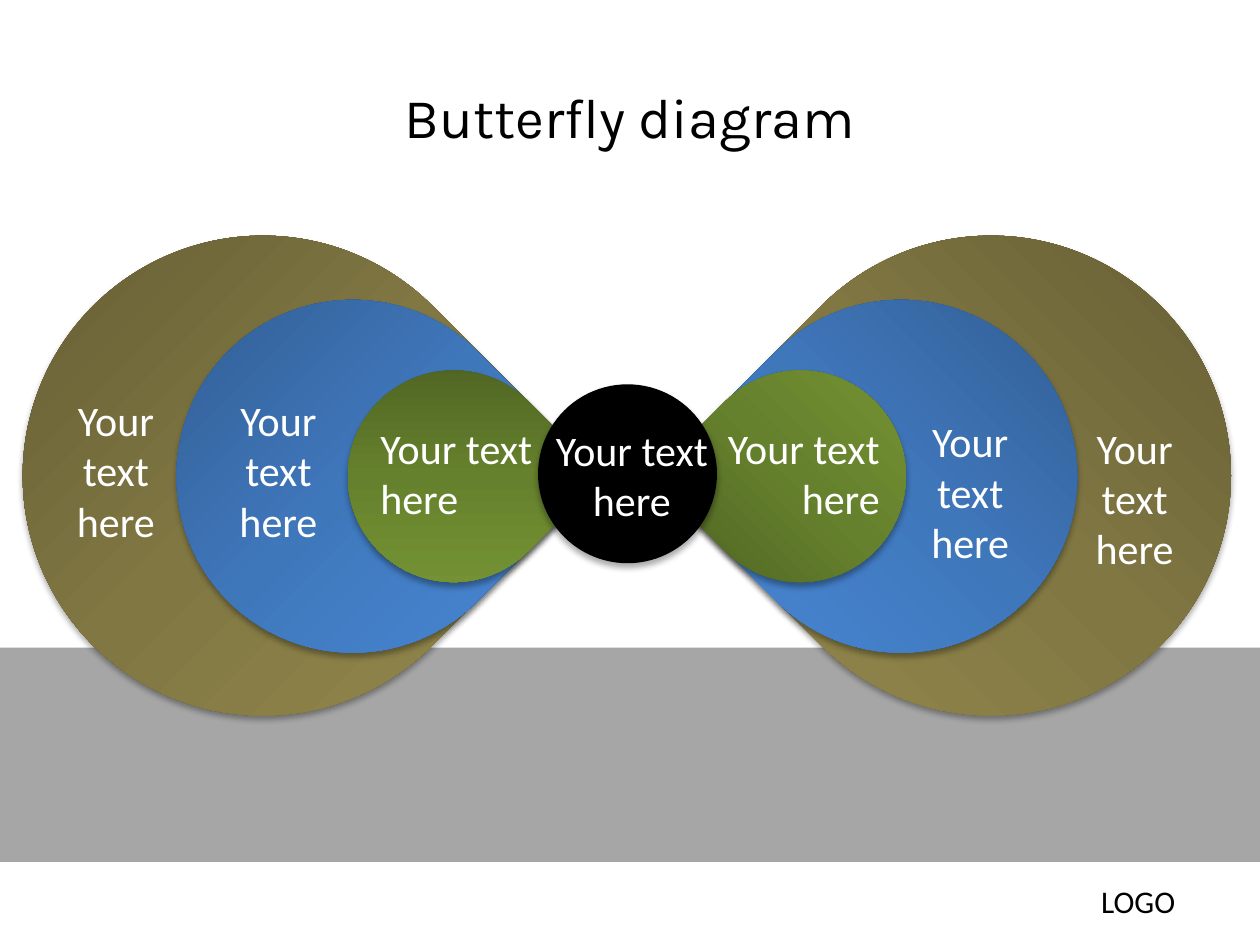
from dataclasses import dataclass

from lxml import etree
from pptx import Presentation
from pptx import util as u
from pptx.dml.color import RGBColor
from pptx.enum import shapes, text
from pptx.oxml import parse_xml
from pptx.oxml.ns import nsdecls, qn

Inches = u.Inches
Box = tuple[float, float, float, float]
LEFT, CENTER, RIGHT = text.PP_ALIGN.LEFT, text.PP_ALIGN.CENTER, text.PP_ALIGN.RIGHT
LABEL = "Your text here"
OLIVE = ("5A542F", "817743", "998D4F")
BLUE = ("2D5484", "3F77BB", "4B8DDE")
GREEN = ("485B20", "66812D", "799936")


@dataclass
class Wing:
    left: float
    top: float
    size: float
    colours: tuple[str, str, str]
    label_box: Box
    mirrored: bool = False
    angle: int = 0
    align: text.PP_ALIGN = CENTER


# Back to front
WINGS = [
    Wing(5.96, 1.87, 3.81, OLIVE, (8.42, 3.3, 1.17, 1.31), mirrored=True),
    Wing(0.18, 1.87, 3.81, OLIVE, (0.42, 3.08, 1, 1.31)),
    Wing(1.4, 2.38, 2.8, BLUE, (1.67, 3.08, 1.08, 1.31)),
    Wing(2.76, 2.94, 1.68, GREEN, (2.92, 3.3, 1.75, 0.91), angle=45, align=LEFT),
    Wing(5.75, 2.38, 2.8, BLUE, (7.24, 3.25, 0.92, 1.31), mirrored=True),
    Wing(5.51, 2.94, 1.68, GREEN, (5.33, 3.3, 1.75, 0.91), mirrored=True,
         angle=180, align=RIGHT),
]


def rgb(colour: str) -> RGBColor:
    return RGBColor.from_string(colour)


def add_text(s, box: Box, words: str, size: int = 24, colour: str = "FFFFFF",
             font: str = "Calibri", align=CENTER, anchor=text.MSO_ANCHOR.TOP) -> None:
    tf = s.shapes.add_textbox(*map(Inches, box)).text_frame
    for name, value in {"word_wrap": True, "vertical_anchor": anchor}.items():
        setattr(tf, name, value)
    p = tf.paragraphs[0]
    p.alignment = align
    r = p.add_run()
    r.text = words
    for name, value in {"name": font, "size": u.Pt(size)}.items():
        setattr(r.font, name, value)
    r.font.color.rgb = rgb(colour)


def add_shape(s, kind, box: Box, fill: str | None = None):
    sp = s.shapes.add_shape(kind, *map(Inches, box))
    sp.shadow.inherit = False
    sp.line.fill.background()
    if fill:
        sp.fill.solid()
        sp.fill.fore_color.rgb = rgb(fill)
    return sp


def add_shadow(sp) -> None:
    effects = sp._element.spPr.find(qn("a:effectLst"))
    effects.append(parse_xml(
        f'<a:outerShdw {nsdecls("a")} blurRad="{u.Pt(3.5)}" dist="{u.Pt(2.2)}" '
        'dir="5400000" rotWithShape="0"><a:srgbClr val="000000">'
        '<a:alpha val="32000"/></a:srgbClr></a:outerShdw>'))


def add_gradient(sp, colours: tuple[str, str, str], angle: int) -> None:
    stops = "".join(f'<a:gs pos="{pos}"><a:srgbClr val="{colour}"/></a:gs>'
                    for pos, colour in zip((0, 50000, 100000), colours))
    sp._element.spPr.find(qn("a:ln")).addprevious(parse_xml(
        f'<a:gradFill {nsdecls("a")} rotWithShape="1"><a:gsLst>{stops}</a:gsLst>'
        f'<a:lin ang="{angle * 60000}" scaled="0"/></a:gradFill>'))


def add_wing(s, wing: Wing) -> None:
    sp = add_shape(s, shapes.MSO_SHAPE.TEAR,
                   (wing.left, wing.top, wing.size, wing.size))
    sp.rotation = 315 if wing.mirrored else 45
    if wing.mirrored:
        sp._element.spPr.find(qn("a:xfrm")).set("flipH", "1")
    add_gradient(sp, wing.colours, wing.angle)
    add_shadow(sp)
    add_text(s, wing.label_box, LABEL, align=wing.align)


def add_rule(s, y: float) -> None:
    rule = s.shapes.add_connector(shapes.MSO_CONNECTOR.STRAIGHT,
                                  Inches(0), Inches(y), Inches(10), Inches(y))
    rule.line.color.rgb = rgb("000000")
    rule.line.width = u.Pt(0.75)
    etree.SubElement(rule._element.spPr, qn("a:effectLst"))


def main() -> None:
    prs = Presentation()
    prs.slide_width, prs.slide_height = Inches(10), Inches(7.5)
    s = prs.slides.add_slide(prs.slide_layouts[6])

    # Footer and grey band
    add_rule(s, 6.82)
    add_text(s, (8.64, 6.95, 1.11, 0.4), "LOGO", 18, "000000", align=LEFT)
    add_shape(s, shapes.MSO_SHAPE.RECTANGLE, (0, 5.14, 10, 1.7), "A6A6A6")

    # Title
    add_text(s, (0.5, 0.3, 9, 1.25), "Butterfly diagram", 32, "000000", "Karla",
             anchor=text.MSO_ANCHOR.MIDDLE)

    # Wings
    for wing in WINGS:
        add_wing(s, wing)

    # Body
    add_shadow(add_shape(s, shapes.MSO_SHAPE.OVAL, (4.27, 3.05, 1.42, 1.42), "000000"))
    add_text(s, (4.14, 3.32, 1.75, 0.91), LABEL)

    prs.save("out.pptx")


if __name__ == "__main__":
    main()
